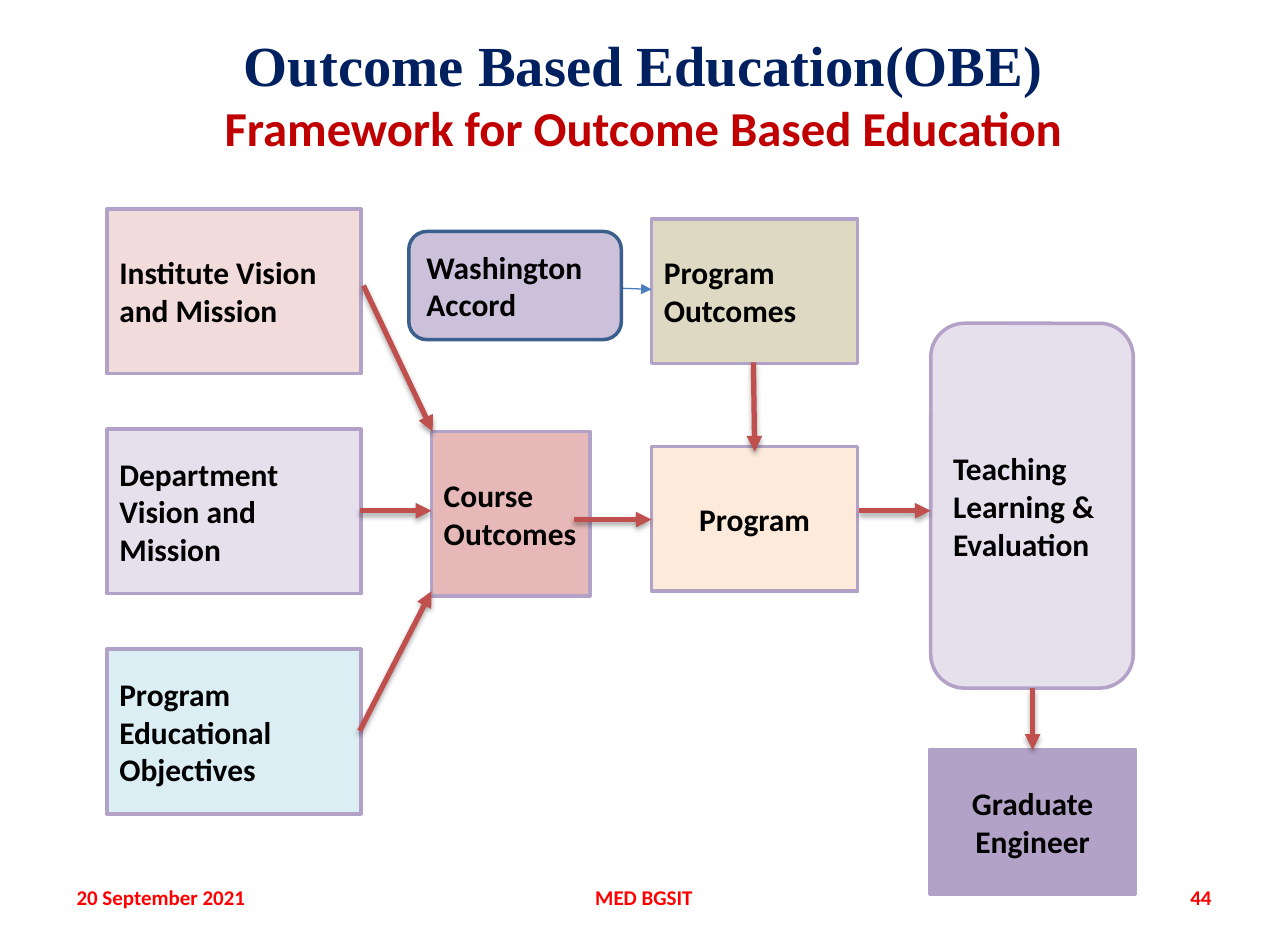
from lxml import etree
from pptx import Presentation
from pptx import util as u
from pptx.dml.color import RGBColor
from pptx.enum import shapes, text
from pptx.oxml import ns

RECT = shapes.MSO_SHAPE.RECTANGLE
ROUND = shapes.MSO_SHAPE.ROUNDED_RECTANGLE
LEFT, CENTER, RIGHT = text.PP_ALIGN.LEFT, text.PP_ALIGN.CENTER, text.PP_ALIGN.RIGHT
LILAC = "B3A2C7"


def color(value):
    return RGBColor.from_string(value)


def inches(*lengths):
    return [u.Inches(length) for length in lengths]


def write(shape, lines, align):
    frame = shape.text_frame
    frame.word_wrap = True
    frame.vertical_anchor = text.MSO_ANCHOR.MIDDLE
    for index, (words, font, size, shade) in enumerate(lines):
        para = frame.add_paragraph() if index else frame.paragraphs[0]
        para.text = words
        para.alignment = align
        para.font.name = font
        para.font.size = u.Pt(size)
        para.font.bold = True
        para.font.color.rgb = color(shade)


def add_label(page, box, lines, align):
    write(page.shapes.add_textbox(*inches(*box)), lines, align)


def add_node(page, box, kind, words, fill, line=LILAC, align=LEFT):
    node = page.shapes.add_shape(kind, *inches(*box))
    node.shadow.inherit = False
    node.fill.solid()
    node.fill.fore_color.rgb = color(fill)
    node.line.color.rgb = color(line)
    node.line.width = u.Pt(2)
    write(node, [(words, "Calibri", 18, "000000")], align)


def add_arrow(page, start, end, shade="C0504D", width=3, shadow=True):
    arrow = page.shapes.add_connector(
        shapes.MSO_CONNECTOR.STRAIGHT, *inches(*start, *end))
    arrow.line.color.rgb = color(shade)
    arrow.line.width = u.Pt(width)
    outline = arrow.line._get_or_add_ln()
    etree.SubElement(outline, ns.qn("a:tailEnd"), type="triangle")
    effects = etree.SubElement(arrow._element.spPr, ns.qn("a:effectLst"))
    if shadow:
        outer = etree.SubElement(
            effects, ns.qn("a:outerShdw"), blurRad=str(u.Pt(3.1)),
            dist=str(u.Pt(1.8)), dir="5400000", rotWithShape="0")
        black = etree.SubElement(outer, ns.qn("a:srgbClr"), val="000000")
        etree.SubElement(black, ns.qn("a:alpha"), val="35000")


def add_title(page, box):
    add_label(page, box, [
        ("Outcome Based Education(OBE)", "Times New Roman", 32.4, "002060"),
        ("Framework for Outcome Based Education", "Calibri", 27.9, "C00000"),
    ], CENTER)


def add_framework(page, box):
    left, top = box[:2]

    def place(x, y):
        return left + x, top + y

    sources = [
        ("Institute Vision and Mission", "F2DCDB"),
        ("Department Vision and Mission", "E6E0EC"),
        ("Program Educational Objectives", "DBEEF4"),
    ]
    for row, (words, fill) in enumerate(sources):
        add_node(page, (*place(0, row * 1.75), 2.02, 1.31), RECT, words, fill)

    add_node(page, (*place(2.58, 1.77), 1.26, 1.31), RECT, "Course Outcomes", "E6B9B8")
    for x, y, words, fill, align in [
        (4.33, 0.08, "Program Outcomes", "DDD9C3", LEFT),
        (4.33, 1.89, "Program", "FDEADA", CENTER),
        (6.54, 4.3, "Graduate Engineer", LILAC, CENTER),
    ]:
        add_node(page, (*place(x, y), 1.64, 1.15), RECT, words, fill, align=align)
    add_node(page, (*place(6.55, 0.91), 1.61, 2.9), ROUND,
             "Teaching Learning & Evaluation", "E6E0EC")

    for start, end in [
        ((2.01, 2.4), (2.58, 2.4)),
        ((2.04, 0.61), (2.59, 1.77)),
        ((2.01, 4.15), (2.58, 3.04)),
        ((3.71, 2.47), (4.33, 2.47)),
        ((5.14, 1.22), (5.15, 1.93)),
        ((5.98, 2.4), (6.55, 2.4)),
        ((7.36, 3.81), (7.36, 4.3)),
    ]:
        add_arrow(page, place(*start), place(*end))

    add_arrow(page, place(4.04, 0.63), place(4.33, 0.64), "4B7EBC", 0.75, False)
    add_node(page, (*place(2.4, 0.18), 1.69, 0.86), ROUND,
             "Washington Accord", "CCC1DA", "3A5F8C")


def add_footer(page, box):
    left, top, width, height = box
    for x, part, words, align in [
        (0, 2.39, "20 September 2021", LEFT),
        ((width - 3.24) / 2, 3.24, "MED BGSIT", CENTER),
        (width - 2.39, 2.39, "44", RIGHT),
    ]:
        add_label(page, (left + x, top, part, height),
                  [(words, "Calibri", 12, "FF0000")], align)


def main():
    deck = Presentation()
    deck.slide_width, deck.slide_height = inches(10.24, 7.48)
    page = deck.slides.add_slide(deck.slide_layouts[6])
    add_footer(page, (0.51, 6.93, 9.22, 0.4))
    add_title(page, (0.51, 0.24, 9.21, 1))
    add_framework(page, (0.85, 1.66, 8.18, 5.45))
    deck.save("out.pptx")


if __name__ == "__main__":
    main()
